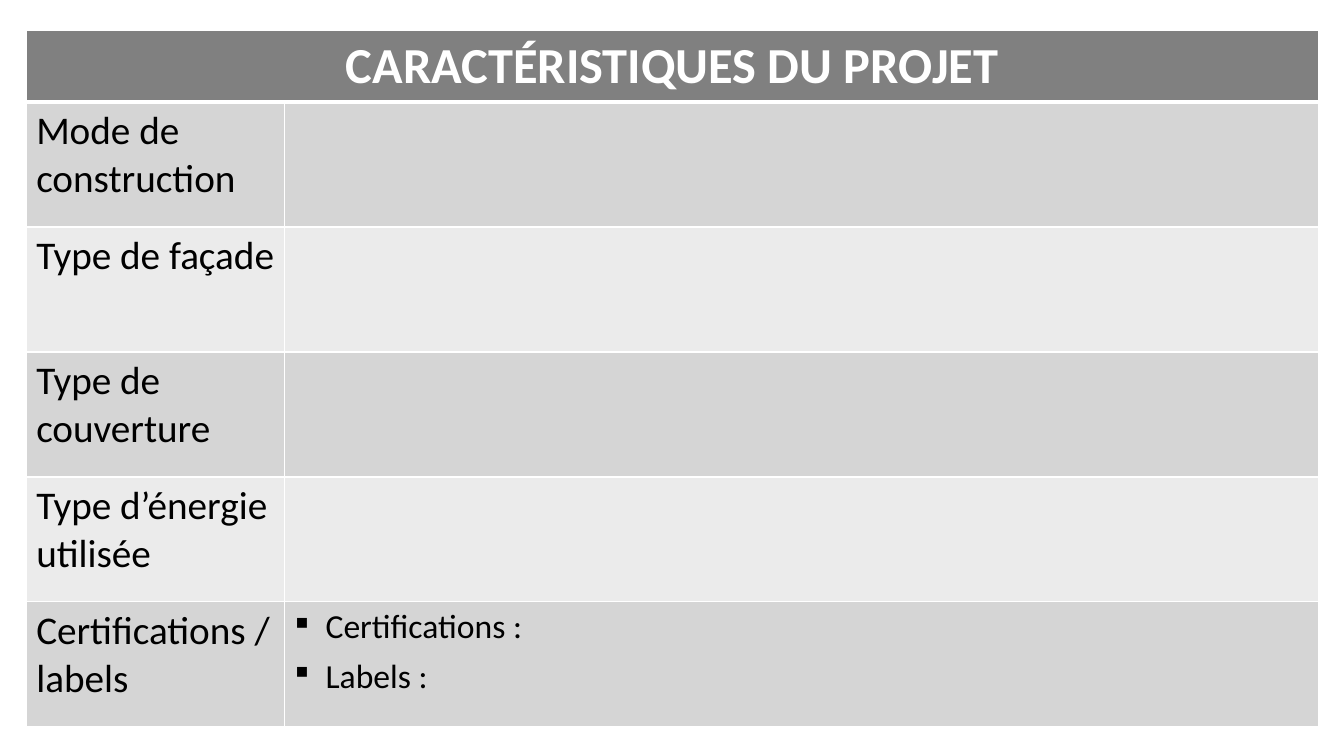
"""Build the project characteristics table slide."""
from dataclasses import dataclass

from lxml.etree import SubElement
from pptx import Presentation
from pptx.dml.color import RGBColor as Rgb
from pptx.enum.text import MSO_ANCHOR as Anchor, PP_ALIGN as Align
from pptx.oxml.ns import qn
from pptx.util import Inches, Pt

TITLE = "CARACTÉRISTIQUES DU PROJET"
ROWS = [
    ("Mode de construction", []),
    ("Type de façade", []),
    ("Type de couverture", []),
    ("Type d’énergie utilisée", []),
    ("Certifications / labels", ["Certifications : ", "Labels : "]),
]


@dataclass(frozen=True)
class Theme:
    font: str = "Calibri"
    head: str = "808080"
    bands: tuple = ("D5D5D5", "EBEBEB")
    white: str = "FFFFFF"
    black: str = "000000"
    title: int = 36
    label: int = 28
    item: int = 24
    thin: int = 1
    thick: int = 3


LOOK = Theme()
WIDE, HIGH = 13.33, 7.5
LEFT, TOP = 0.26, 0.3
COLS = (2.56, 10.26)
HEAD, ROW = 0.69, 1.24
INDENT = 0.31


def paint(cell, color, top, base):
    props = cell._tc.get_or_add_tcPr()
    sides = {"L": LOOK.thin, "R": LOOK.thin, "T": top, "B": base}
    for side, width in sides.items():
        line = SubElement(props, qn("a:ln" + side), w=str(Pt(width)))
        fill = SubElement(line, qn("a:solidFill"))
        SubElement(fill, qn("a:srgbClr"), val=LOOK.white)
    cell.fill.solid()
    cell.fill.fore_color.rgb = Rgb.from_string(color)


def write(para, text, size, color=LOOK.black, bold=False):
    run = para.add_run()
    run.text = text
    font = run.font
    font.name, font.size, font.bold = LOOK.font, Pt(size), bold
    font.color.rgb = Rgb.from_string(color)


def bullet(para):
    para.alignment = Align.JUSTIFY
    para.space_after = Pt(6)
    props = para._p.get_or_add_pPr()
    props.set("marL", str(Inches(INDENT)))
    props.set("indent", str(-Inches(INDENT)))
    SubElement(props, qn("a:buFont"), typeface="Wingdings")
    SubElement(props, qn("a:buChar"), char="§")


def fill_head(grid):
    head = grid.cell(0, 0)
    head.merge(grid.cell(0, 1))
    for cell in grid.rows[0].cells:
        paint(cell, LOOK.head, LOOK.thin, LOOK.thick)
    head.vertical_anchor = Anchor.MIDDLE
    para = head.text_frame.paragraphs[0]
    para.alignment = Align.CENTER
    write(para, TITLE, LOOK.title, LOOK.white, True)


def fill_row(grid, row, label, items):
    top = LOOK.thick if row == 1 else LOOK.thin
    for cell in grid.rows[row].cells:
        paint(cell, LOOK.bands[(row - 1) % 2], top, LOOK.thin)
    name, body = grid.rows[row].cells
    write(name.text_frame.paragraphs[0], label, LOOK.label)
    frame = body.text_frame
    for place, item in enumerate(items):
        para = frame.add_paragraph() if place else frame.paragraphs[0]
        bullet(para)
        write(para, item, LOOK.item)


def main():
    deck = Presentation()
    deck.slide_width, deck.slide_height = Inches(WIDE), Inches(HIGH)
    slide = deck.slides.add_slide(deck.slide_layouts[6])
    highs = [HEAD] + [ROW] * len(ROWS)
    box = [Inches(n) for n in (LEFT, TOP, sum(COLS), sum(highs))]
    grid = slide.shapes.add_table(len(highs), len(COLS), *box).table
    for col, width in zip(grid.columns, COLS):
        col.width = Inches(width)
    for row, high in zip(grid.rows, highs):
        row.height = Inches(high)
    fill_head(grid)
    for row, (label, items) in enumerate(ROWS, 1):
        fill_row(grid, row, label, items)
    deck.save("out.pptx")


if __name__ == "__main__":
    main()
